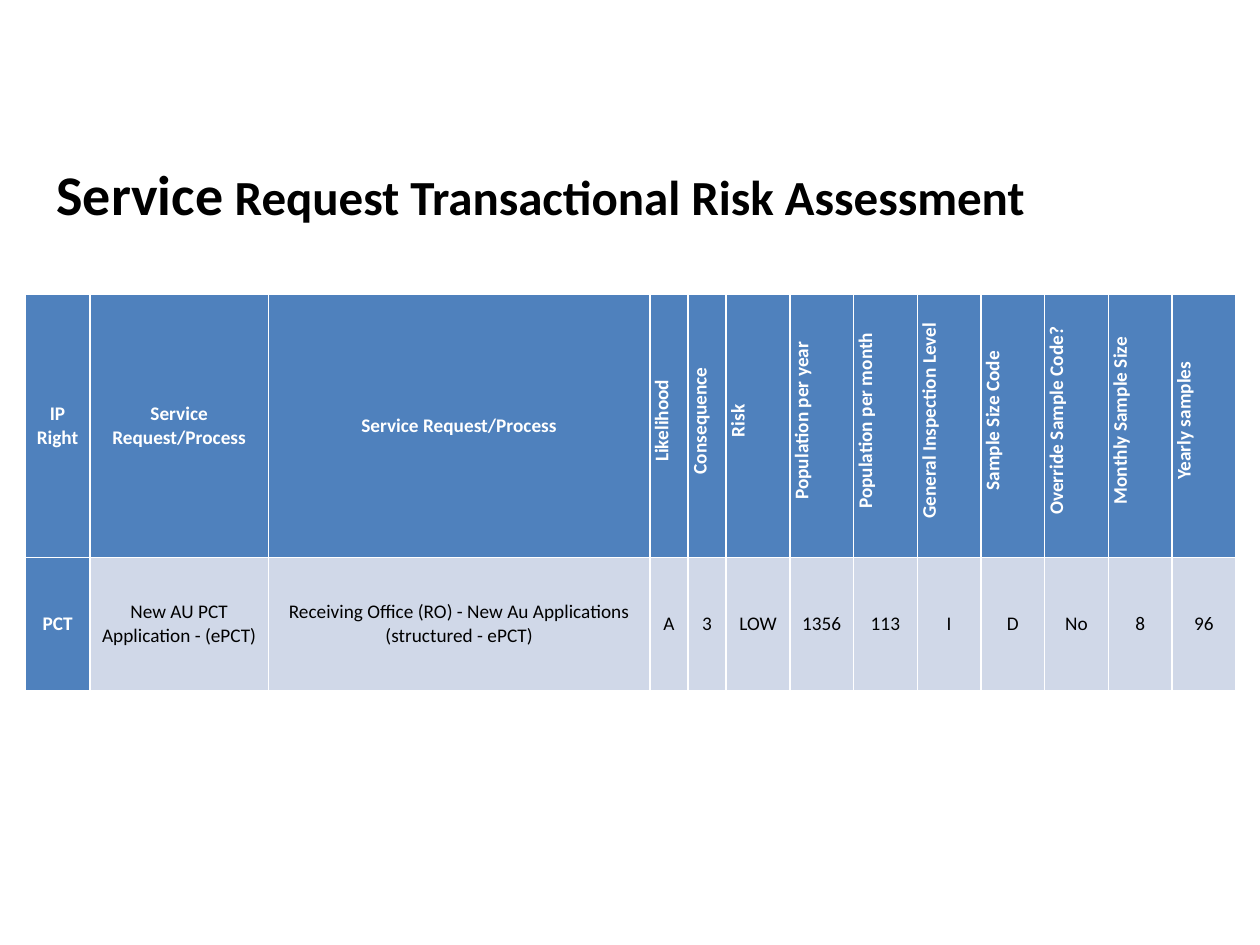
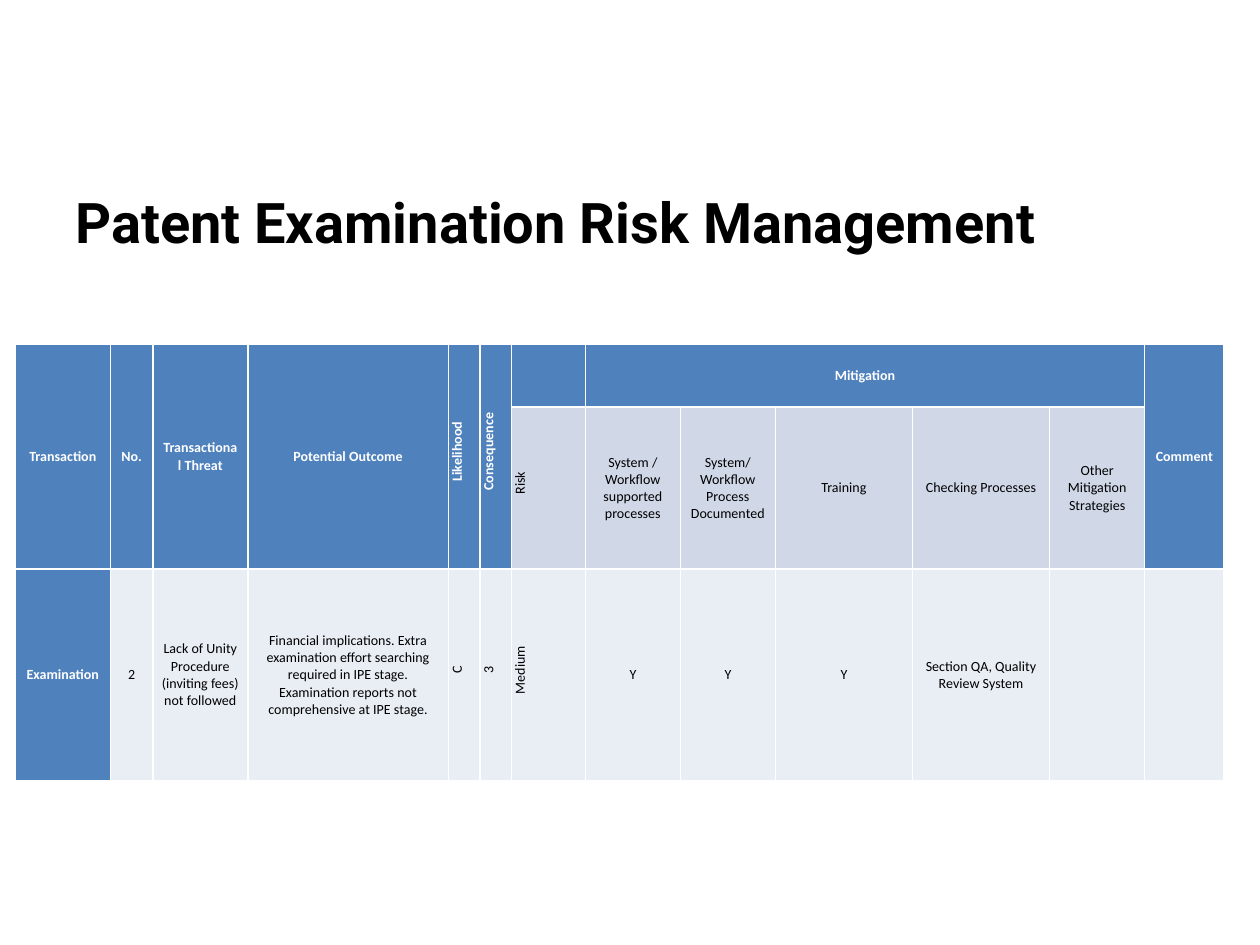
"""Builds two slides of risk tables: service requests and patent examination."""
from dataclasses import dataclass

from pptx import Presentation
from pptx.dml.color import RGBColor
from pptx.enum import text
from pptx.util import Pt


@dataclass(frozen=True)
class Theme:
    head: RGBColor = RGBColor.from_string("4F81BD")
    odd: RGBColor = RGBColor.from_string("D0D8E8")
    even: RGBColor = RGBColor.from_string("E9EDF4")
    white: RGBColor = RGBColor.from_string("FFFFFF")
    ink: RGBColor = RGBColor.from_string("000000")
    body: str = "Calibri"
    title: str = "Roboto"
    big: int = 32
    mid: int = 28
    cell: int = 11
    small: int = 8


look = Theme()


def add_title(slide, box, runs):
    frame = slide.shapes.add_textbox(*map(Pt, box)).text_frame
    frame.word_wrap = True
    frame.vertical_anchor = text.MSO_ANCHOR.MIDDLE
    for words, name, size in runs:
        run = frame.paragraphs[0].add_run()
        run.text = words
        run.font.name, run.font.size, run.font.bold = name, Pt(size), True
        run.font.color.rgb = look.ink


def add_grid(slide, left, top, widths, heights, rows, size, turned, merges=()):
    box = slide.shapes.add_table(len(heights), len(widths), Pt(left), Pt(top),
                                 Pt(sum(widths)), Pt(sum(heights)))
    grid = box.table
    grid.first_col = True
    for col, width in zip(grid.columns, widths):
        col.width = Pt(width)
    for row, height in zip(grid.rows, heights):
        row.height = Pt(height)
    for start, end in merges:
        grid.cell(*start).merge(grid.cell(*end))
    for r, row in enumerate(rows):
        for c, words in enumerate(row):
            cell = grid.cell(r, c)
            dark = r == 0 or c == 0 or cell.is_spanned
            cell.fill.solid()
            cell.fill.fore_color.rgb = look.head if dark else (look.even, look.odd)[r % 2]
            cell.vertical_anchor = text.MSO_ANCHOR.MIDDLE
            cell.margin_left = cell.margin_right = Pt(5)
            cell.margin_top = cell.margin_bottom = Pt(0)
            if not words:
                continue
            cell.text_frame.text = words
            para = cell.text_frame.paragraphs[0]
            para.alignment = text.PP_ALIGN.CENTER
            if (r, c) in turned:
                cell._tc.get_or_add_tcPr().set("vert", "vert270")
                para._p.get_or_add_pPr().set("marL", str(Pt(5.65)))
            font = para.runs[0].font
            font.name, font.size, font.bold = look.body, Pt(size), dark
            font.color.rgb = look.white if dark else look.ink


deck = Presentation()
deck.slide_width, deck.slide_height = Pt(720), Pt(540)
blank = deck.slide_layouts[6]

slide = deck.slides.add_slide(blank)
add_grid(
    slide, 14.4, 168, [37, 102, 218, 21.8, 21.8] + [36.4] * 8, [150.5, 76.3],
    [
        ["IP Right", "Service Request/Process", "Service Request/Process",
         "Likelihood", "Consequence", "Risk", "Population per year",
         "Population per month", "General Inspection Level", "Sample Size Code",
         "Override Sample Code?", "Monthly Sample Size", "Yearly samples"],
        ["PCT", "New AU PCT Application - (ePCT)",
         "Receiving Office (RO) - New Au Applications (structured - ePCT)",
         "A", "3", "LOW", "1356", "113", "I", "D", "No", "8", "96"],
    ],
    look.cell, [(0, c) for c in range(3, 13)])
add_title(slide, (25.2, 87.1, 646.6, 46.1), [
    ("Service", look.body, look.big),
    (" Request Transactional Risk Assessment", look.body, look.mid)])

slide = deck.slides.add_slide(blank)
add_title(slide, (36, 81.4, 648, 90), [
    ("Patent Examination Risk Management", look.title, look.big)])
add_grid(
    slide, 8.8, 196.6,
    [54.3, 24.3, 54.3, 114.6, 18, 18, 42.3, 54.3, 54.3, 78.4, 78.4, 54.3, 45.4],
    [36, 92.6, 121],
    [
        ["Transaction", "No.", "Transactional Threat", "Potential Outcome",
         "Likelihood", "Consequence", "", "Mitigation", "", "", "", "", "Comment"],
        [""] * 6 + ["Risk", "System / Workflow supported processes",
                    "System/ Workflow Process Documented", "Training",
                    "Checking Processes", "Other Mitigation Strategies", ""],
        ["Examination", "2", "Lack of Unity Procedure (inviting fees) not followed",
         "Financial implications. Extra examination effort searching required in "
         "IPE stage. Examination reports not comprehensive at IPE stage.",
         "C", "3", "Medium", "Y", "Y", "Y", "Section QA, Quality Review System",
         "", ""],
    ],
    look.small, [(0, 4), (0, 5), (1, 6), (2, 4), (2, 5), (2, 6)],
    [((0, c), (1, c)) for c in (*range(6), 12)] + [((0, 7), (0, 11))])

deck.save("out.pptx")
